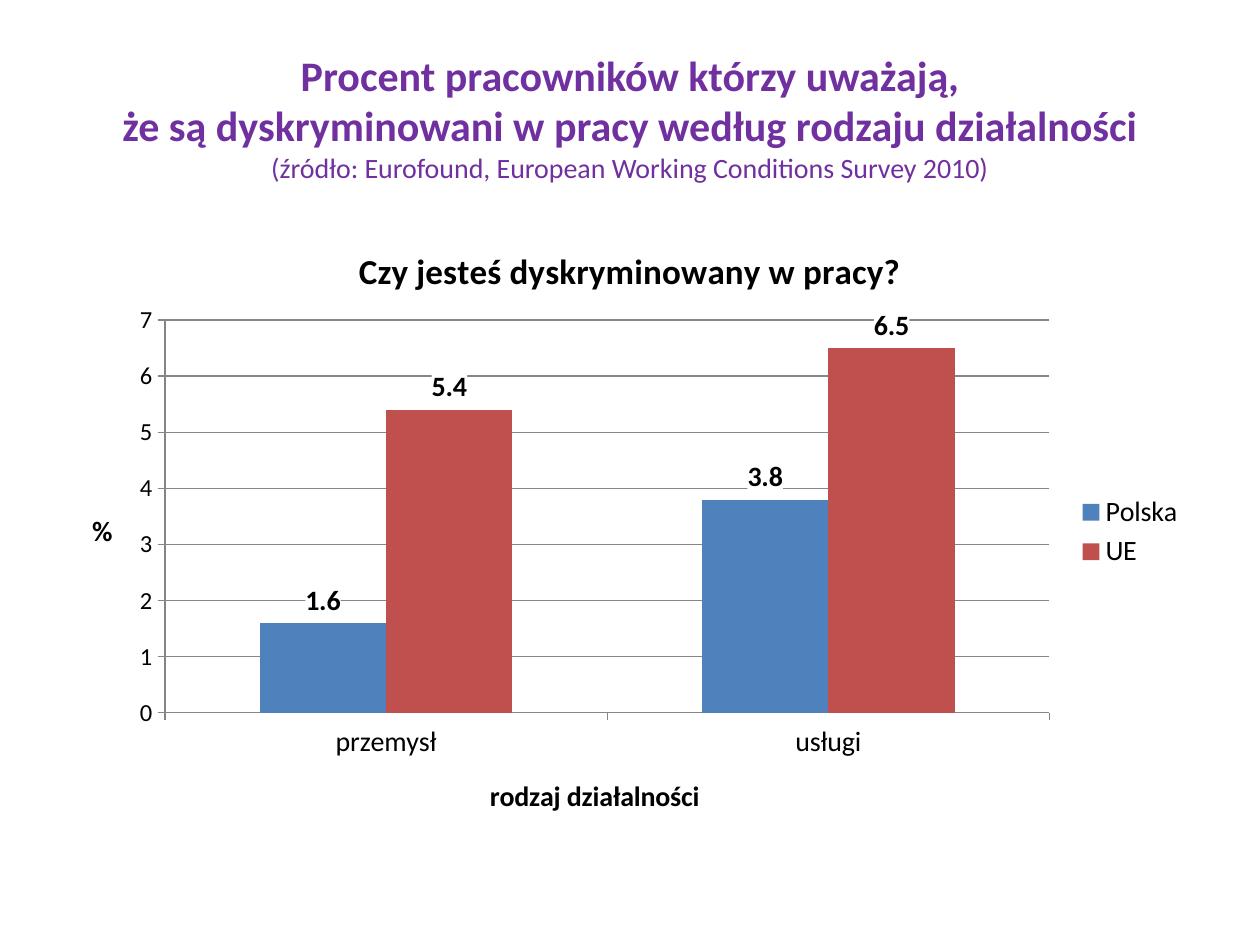
from lxml import etree
from pptx import Presentation
from pptx.chart import data
from pptx.dml.color import RGBColor
from pptx.enum import chart as kinds, text
from pptx.oxml import parse_xml
from pptx.oxml.ns import nsdecls, qn
from pptx.util import Inches, Pt


def tint(code):
    return RGBColor.from_string(code)


def style(font, **vals):
    font.color.rgb = tint(vals.pop("color", "000000"))
    for key, val in {"name": "Calibri", "bold": False, **vals}.items():
        setattr(font, key, val)


class Deck:
    wide, high = Inches(10), Inches(7.5)

    def __init__(self):
        self.file = Presentation()
        self.file.slide_width, self.file.slide_height = self.wide, self.high
        self.page = self.file.slides.add_slide(self.file.slide_layouts[6])

    def place(self, x, y, w, h):
        return (round(x * self.wide), round(y * self.high),
                round(w * self.wide), round(h * self.high))

    def title(self, area, runs, color):
        frame = self.page.shapes.add_textbox(*self.place(*area)).text_frame
        frame.word_wrap = True
        frame.vertical_anchor = text.MSO_ANCHOR.MIDDLE
        para = frame.paragraphs[0]
        para.alignment = text.PP_ALIGN.CENTER
        for row, (words, size, bold) in enumerate(runs):
            if row:
                para.add_line_break()
            run = para.add_run()
            run.text = words
            style(run.font, size=Pt(size), bold=bold, color=color)

    def head(self, owner, words, size):
        frame = (owner.chart_title if hasattr(owner, "chart_title")
                 else owner.axis_title).text_frame
        run = frame.paragraphs[0].add_run()
        run.text = words
        style(run.font, size=Pt(size), bold=True)
        return frame

    def axis(self, axis, words, size):
        frame = self.head(axis, words, 16)
        style(axis.tick_labels.font, size=Pt(size))
        axis.major_tick_mark = kinds.XL_TICK_MARK.OUTSIDE
        axis.minor_tick_mark = kinds.XL_TICK_MARK.NONE
        axis.format.line.color.rgb = tint("868686")
        return frame

    def bars(self, area, plan, names, rows):
        info = data.CategoryChartData()
        info.categories = names
        for name, vals, _ in rows:
            info.add_series(name, vals)
        chart = self.page.shapes.add_chart(
            kinds.XL_CHART_TYPE.COLUMN_CLUSTERED, *self.place(*area), info).chart
        style(chart.font, size=Pt(10))
        self.head(chart, "Czy jesteś dyskryminowany w pracy?", 20)
        self.axis(chart.category_axis, "rodzaj działalności", 16)
        side = chart.value_axis
        frame = self.axis(side, "%", 14)
        turn = frame._txBody.find(qn("a:bodyPr"))
        turn.set("rot", "0")
        turn.set("vert", "horz")
        side.minimum_scale, side.maximum_scale, side.major_unit = 0, 7, 1
        side.major_gridlines.format.line.color.rgb = tint("868686")
        chart.has_legend = True
        chart.legend.position = kinds.XL_LEGEND_POSITION.RIGHT
        chart.legend.include_in_layout = False
        style(chart.legend.font, size=Pt(16))
        plot = chart.plots[0]
        plot.gap_width, plot.overlap, plot.vary_by_categories = 150, 0, False
        for bar, (_, _, color) in zip(plot.series, rows):
            bar.format.fill.solid()
            bar.format.fill.fore_color.rgb = tint(color)
            self.label(bar.data_labels)
        self.fit(chart, plan)

    def label(self, tags):
        style(tags.font, size=Pt(16), bold=True)
        tags.show_value = True
        tags.position = kinds.XL_LABEL_POSITION.OUTSIDE_END
        tags._element.find(qn("c:txPr")).addprevious(parse_xml(
            f'<c:spPr {nsdecls("c", "a")}><a:solidFill>'
            '<a:srgbClr val="FFFFFF"/></a:solidFill></c:spPr>'))

    def fit(self, chart, plan):
        area = chart._chartSpace.find(".//" + qn("c:plotArea"))
        for old in area.findall(qn("c:layout")):
            area.remove(old)
        outer = etree.Element(qn("c:layout"))
        inner = etree.SubElement(outer, qn("c:manualLayout"))
        vals = {"layoutTarget": "inner", "xMode": "edge", "yMode": "edge",
                **dict(zip("xywh", plan))}
        for key, val in vals.items():
            etree.SubElement(inner, qn("c:" + key)).set("val", str(val))
        area.insert(0, outer)


def main():
    deck = Deck()
    deck.title((0.05, 0.04, 0.9, 0.167), [
        ("Procent pracowników którzy uważają,", 24, True),
        ("że są dyskryminowani w pracy według rodzaju działalności", 24, True),
        ("(źródło: Eurofound, European Working Conditions Survey 2010)", 16, False),
    ], "7030A0")
    deck.bars((0.05, 0.233, 0.9, 0.66), (0.09, 0.16, 0.78, 0.63),
              ["przemysł", "usługi"],
              [("Polska", (1.6, 3.8), "4F81BD"), ("UE", (5.4, 6.5), "C0504D")])
    deck.file.save("out.pptx")


if __name__ == "__main__":
    main()
